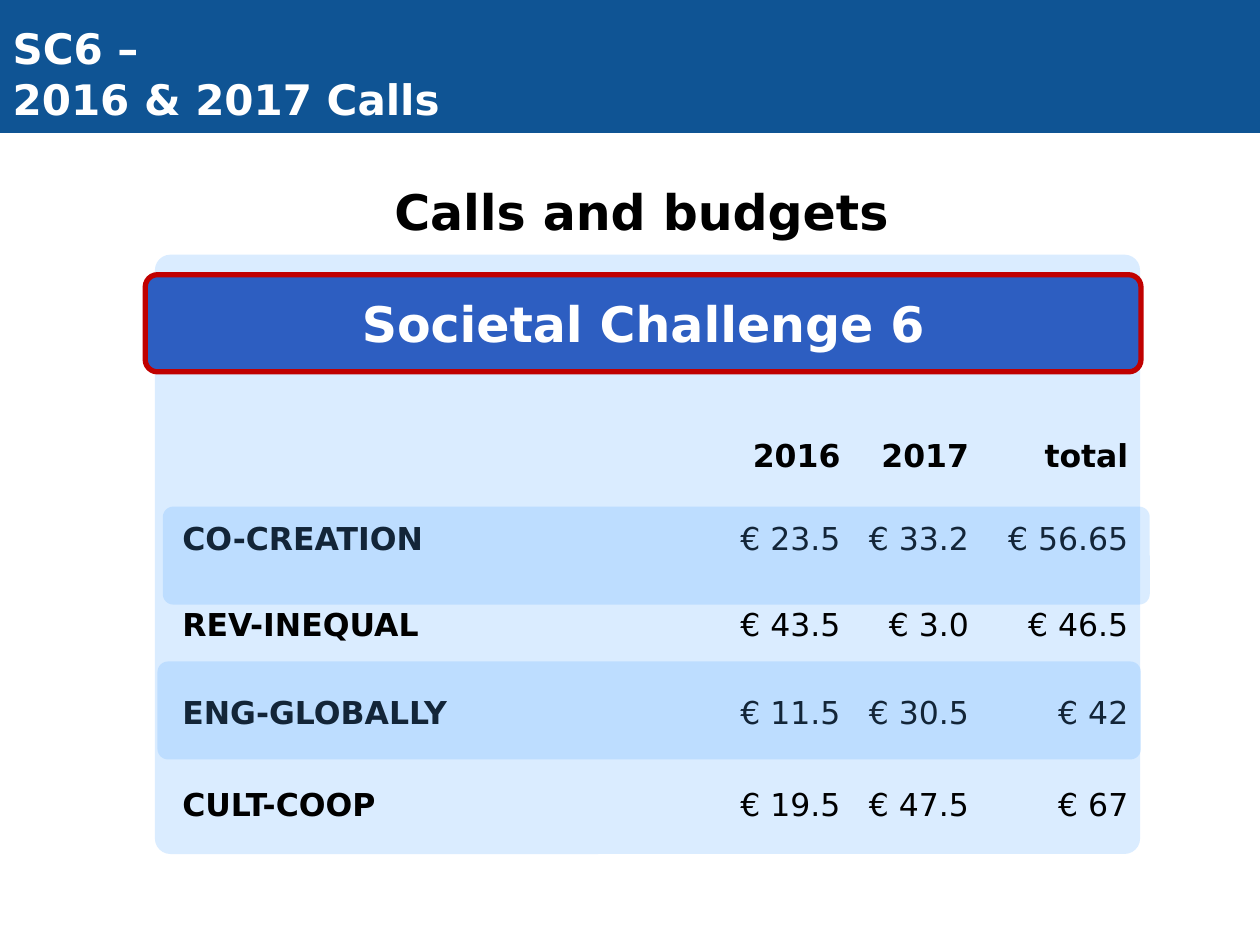
from lxml import etree
from pptx import Presentation
from pptx.dml.color import RGBColor
from pptx.enum import shapes, text
from pptx.oxml.ns import qn
from pptx.util import Pt

FONT = "DejaVu Sans"
BANNER = RGBColor(0x0F, 0x54, 0x94)
HEADING = RGBColor(0x2D, 0x5E, 0xC1)
OUTLINE = RGBColor(0xC0, 0x00, 0x00)
PANEL = RGBColor(0x57, 0xAB, 0xFF)
WHITE = RGBColor(0xFF, 0xFF, 0xFF)
BLACK = RGBColor(0x00, 0x00, 0x00)
RECT = shapes.MSO_SHAPE.RECTANGLE
ROUNDED = shapes.MSO_SHAPE.ROUNDED_RECTANGLE
LEFT, CENTER, RIGHT = text.PP_ALIGN.LEFT, text.PP_ALIGN.CENTER, text.PP_ALIGN.RIGHT
NO_GRID_STYLE = "{2D5ABB26-0587-4C30-8999-92F81FD0307C}"

COLUMN_WIDTHS = [317, 73.5, 73.5, 91]
ROW_HEIGHTS = [47.5, 47.5, 50.5, 50.5, 54.5]
BUDGETS = [
    ["", "2016", "2017", "total"],
    ["CO-CREATION", "€ 23.5", "€ 33.2", "€ 56.65"],
    ["REV-INEQUAL", "€ 43.5", "€ 3.0", "€ 46.5"],
    ["ENG-GLOBALLY", "€ 11.5", "€ 30.5", "€ 42"],
    ["CULT-COOP", "€ 19.5", "€ 47.5", "€ 67"],
]


def write(tf, content, size, color, align, bold=True):
    """Fill a text frame with uniformly formatted lines."""
    tf.text = content
    tf.word_wrap = True
    for p in tf.paragraphs:
        p.alignment = align
        p.font.name = FONT
        p.font.size = Pt(size)
        p.font.bold = bold
        p.font.color.rgb = color


def add_box(s, kind, box, fill, line=None, width=0.75, corner=None, alpha=None):
    """Add a filled shape, optionally outlined, rounded or translucent."""
    sp = s.shapes.add_shape(kind, *map(Pt, box))
    sp.shadow.inherit = False
    sp.fill.solid()
    sp.fill.fore_color.rgb = fill
    if alpha is not None:
        color = sp.element.spPr.find(qn("a:solidFill")).find(qn("a:srgbClr"))
        etree.SubElement(color, qn("a:alpha")).set("val", str(alpha * 1000))
    if corner is not None:
        sp.adjustments[0] = corner
    if line is None:
        sp.line.fill.background()
    else:
        sp.line.color.rgb = line
        sp.line.width = Pt(width)
    return sp


def add_budget_table(s, left, top):
    """Add the unfilled table of calls and yearly budgets."""
    frame = s.shapes.add_table(
        len(BUDGETS), len(COLUMN_WIDTHS), Pt(left), Pt(top),
        Pt(sum(COLUMN_WIDTHS)), Pt(sum(ROW_HEIGHTS)))
    table = frame.table
    table.horz_banding = False
    frame.element.find(".//" + qn("a:tableStyleId")).text = NO_GRID_STYLE
    for column, width in zip(table.columns, COLUMN_WIDTHS):
        column.width = Pt(width)
    for i, (row, height) in enumerate(zip(table.rows, ROW_HEIGHTS)):
        row.height = Pt(height)
        for j, cell in enumerate(row.cells):
            cell.fill.background()
            cell.vertical_anchor = text.MSO_ANCHOR.MIDDLE
            write(cell.text_frame, BUDGETS[i][j], 18, BLACK,
                  RIGHT if j else LEFT, bold=i == 0 or j == 0)


def add_subtitle(s, content, box):
    """Add the centred line above the panel."""
    sp = s.shapes.add_textbox(*map(Pt, box))
    write(sp.text_frame, content, 28, BLACK, CENTER)


def place_title(s, content, box):
    """Format the title placeholder and bring it to the front."""
    sp = s.shapes.title
    sp.left, sp.top, sp.width, sp.height = map(Pt, box)
    write(sp.text_frame, content, 24, WHITE, LEFT)
    sp.text_frame.auto_size = text.MSO_AUTO_SIZE.NONE
    sp.text_frame.vertical_anchor = text.MSO_ANCHOR.TOP
    sp.element.getparent().append(sp.element)


def main():
    """Build the slide of calls and budgets."""
    prs = Presentation()
    prs.slide_width, prs.slide_height = Pt(720), Pt(540)
    s = prs.slides.add_slide(prs.slide_layouts[5])
    add_box(s, RECT, (0, 0, 720, 75.5), BANNER, line=BANNER)
    add_box(s, ROUNDED, (88.5, 145.5, 563, 342.5), PANEL, corner=0.026, alpha=22)
    heading = add_box(s, ROUNDED, (83, 157, 569, 55.5), HEADING,
                      line=OUTLINE, width=3, corner=0.126)
    heading.text_frame.vertical_anchor = text.MSO_ANCHOR.MIDDLE
    write(heading.text_frame, "Societal Challenge 6", 28, WHITE, CENTER)
    add_budget_table(s, 97, 237)
    for left, top, width in ((93, 289.5, 564), (90, 378, 562)):
        add_box(s, ROUNDED, (left, top, width, 56), PANEL, corner=0.108, alpha=22)
    add_subtitle(s, "Calls and budgets", (42.5, 100, 648, 73.5))
    place_title(s, "SC6 –\n2016 & 2017 Calls", (0, 9.5, 286.5, 65.5))
    prs.save("out.pptx")


if __name__ == "__main__":
    main()
